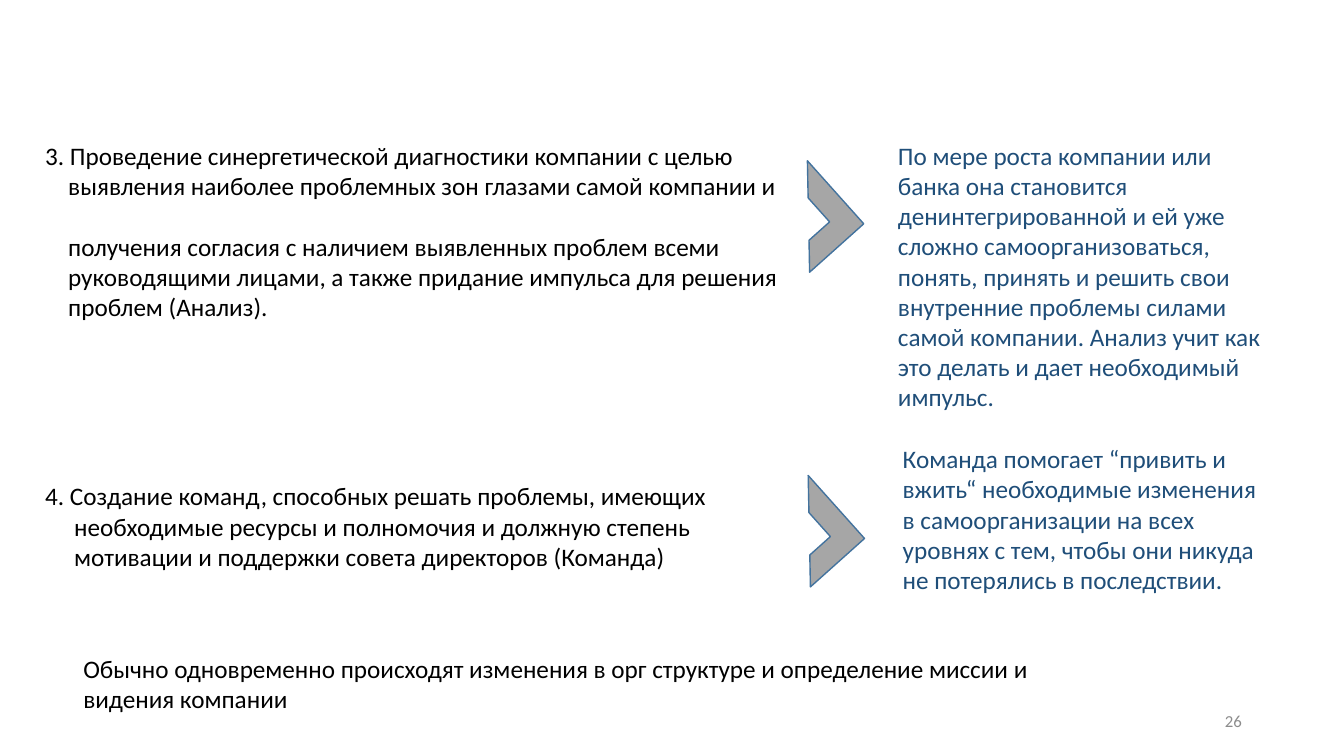
"""Build the slide on diagnostics and team creation, steps 3 and 4."""
from pptx import Presentation, util as u
from pptx.dml.color import RGBColor
from pptx.enum import shapes, text

COLORS = {"step": "000000", "comment": "1F4E79", "number": "8C8C8C",
          "arrow": "A6A6A6", "outline": "43739E"}

deck = Presentation()
deck.slide_width, deck.slide_height = u.Cm(33.87), u.Cm(19.05)
slide = deck.slides.add_slide(deck.slide_layouts[6])


def add_text(left, top, width, height, lines, color, size=18, indent=0):
    """Add a text box with one paragraph per line, indented after the first."""
    box = slide.shapes.add_textbox(u.Cm(left), u.Cm(top), u.Cm(width), u.Cm(height))
    frame = box.text_frame
    frame.word_wrap = True
    for index, line in enumerate(lines):
        paragraph = frame.paragraphs[0] if index == 0 else frame.add_paragraph()
        if index and indent:
            paragraph._p.get_or_add_pPr().set("marL", str(u.Cm(indent)))
        run = paragraph.add_run()
        run.text = line
        run.font.name = "Calibri"
        run.font.size = u.Pt(size)
        run.font.color.rgb = RGBColor.from_string(COLORS[color])
    return frame


page_number = add_text(23.93, 17.65, 7.62, 1.02, ["26"], "number", size=12)
page_number.vertical_anchor = text.MSO_ANCHOR.MIDDLE
page_number.paragraphs[0].alignment = text.PP_ALIGN.RIGHT

diagnostics = add_text(0.89, 3.4, 19.1, 4.11, [
    "3. Проведение синергетической диагностики компании с целью",
    "выявления наиболее проблемных зон глазами самой компании и",
    "получения согласия с наличием выявленных проблем всеми",
    "руководящими лицами, а также придание импульса для решения",
    "проблем (Анализ).",
], "step", indent=0.58)
diagnostics.margin_right = 0
diagnostics.paragraphs[2].space_before = u.Pt(22)

add_text(0.89, 11.99, 19.1, 2.57, [
    "4. Создание команд, способных решать проблемы, имеющих",
    "необходимые ресурсы и полномочия и должную степень",
    "мотивации и поддержки совета директоров (Команда)",
], "step", indent=0.73)

add_text(22.38, 3.4, 9.78, 7.19, [
    "По мере роста компании или банка она становится денинтегрированной и ей уже "
    "сложно самоорганизоваться, понять, принять и решить свои внутренние проблемы "
    "силами самой компании. Анализ учит как это делать и дает необходимый импульс.",
], "comment")

for left, top in ((19.46, 4.39), (19.48, 12.32)):
    arrow = slide.shapes.add_shape(shapes.MSO_SHAPE.HALF_FRAME, u.Cm(left), u.Cm(top),
                                   u.Cm(1.83), u.Cm(2.13))
    arrow.rotation = 138.2
    arrow.shadow.inherit = False
    arrow.fill.solid()
    arrow.fill.fore_color.rgb = RGBColor.from_string(COLORS["arrow"])
    arrow.line.color.rgb = RGBColor.from_string(COLORS["outline"])
    arrow.line.width = u.Pt(1)

add_text(22.5, 11.05, 9.78, 4.11, [
    "Команда помогает “привить и вжить“ необходимые изменения в самоорганизации "
    "на всех уровнях с тем, чтобы они никуда не потерялись в последствии.",
], "comment")

add_text(1.85, 16.33, 26.64, 1.8, [
    "Обычно одновременно происходят изменения в орг структуре и определение миссии и "
    "видения компании",
], "step")

deck.save("out.pptx")
